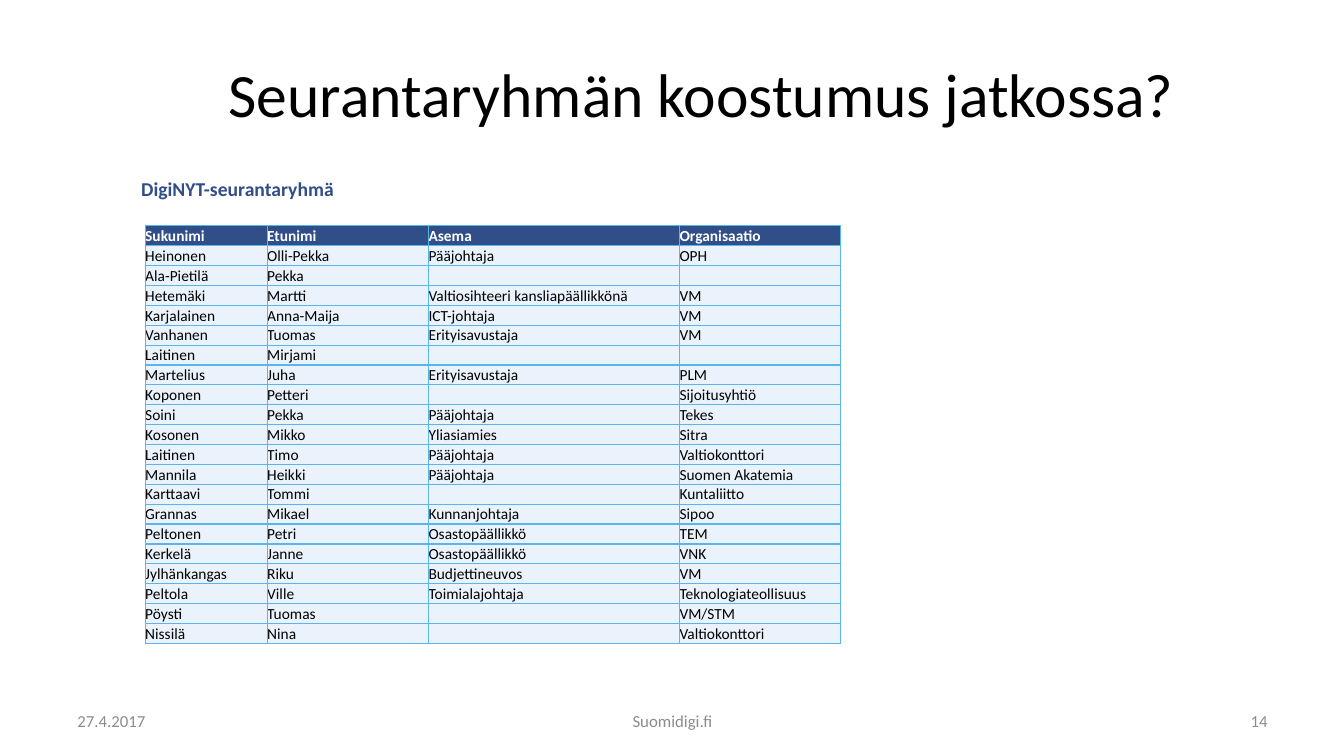
import lxml.etree
import pptx
import pptx.dml.color
import pptx.enum.text
import pptx.oxml.ns
import pptx.util

Inches = pptx.util.Inches
Pt = pptx.util.Pt
RGBColor = pptx.dml.color.RGBColor
ANCHOR = pptx.enum.text.MSO_ANCHOR
ALIGN = pptx.enum.text.PP_ALIGN
qn = pptx.oxml.ns.qn

BLACK = RGBColor(0x00, 0x00, 0x00)
WHITE = RGBColor(0xFF, 0xFF, 0xFF)
GREY = RGBColor(0x8C, 0x8C, 0x8C)
NAVY = RGBColor(0x30, 0x4E, 0x88)
PALE_BLUE = RGBColor(0xEA, 0xF3, 0xFB)
SKY_BLUE = RGBColor(0x5A, 0xB5, 0xEC)

TITLE_FONT = {"name": "Calibri", "size": Pt(44), "bold": False}
HEADING_FONT = {"name": "Calibri", "size": Pt(14), "bold": True}
FOOTER_FONT = {"name": "Calibri", "size": Pt(12), "bold": False}
HEADER_FONT = {"name": "Calibri", "size": Pt(11), "bold": True}
MEMBER_FONT = {"name": "Calibri", "size": Pt(11), "bold": False}

TITLE_FRAME = {"word_wrap": True, "vertical_anchor": ANCHOR.MIDDLE}
HEADING_FRAME = {
    "word_wrap": False,
    "margin_left": Inches(0.13),
    "margin_right": Inches(0.13),
    "margin_top": Inches(0.07),
    "margin_bottom": Inches(0.07),
}
CELL_FORMAT = {
    "vertical_anchor": ANCHOR.BOTTOM,
    "margin_left": 0,
    "margin_right": 0,
    "margin_top": 0,
    "margin_bottom": 0,
}

COLUMN_WIDTHS = (1.21, 1.6, 2.49, 1.6)
MEMBERS = (
    ("Sukunimi", "Etunimi", "Asema", "Organisaatio"),
    ("Heinonen", "Olli-Pekka", "Pääjohtaja", "OPH"),
    ("Ala-Pietilä", "Pekka", "", ""),
    ("Hetemäki", "Martti", "Valtiosihteeri kansliapäällikkönä", "VM"),
    ("Karjalainen", "Anna-Maija", "ICT-johtaja", "VM"),
    ("Vanhanen", "Tuomas", "Erityisavustaja", "VM"),
    ("Laitinen", "Mirjami", "", ""),
    ("Martelius", "Juha", "Erityisavustaja", "PLM"),
    ("Koponen", "Petteri", "", "Sijoitusyhtiö"),
    ("Soini", "Pekka", "Pääjohtaja", "Tekes"),
    ("Kosonen", "Mikko", "Yliasiamies", "Sitra"),
    ("Laitinen", "Timo", "Pääjohtaja", "Valtiokonttori"),
    ("Mannila", "Heikki", "Pääjohtaja", "Suomen Akatemia"),
    ("Karttaavi", "Tommi", "", "Kuntaliitto"),
    ("Grannas", "Mikael", "Kunnanjohtaja", "Sipoo"),
    ("Peltonen", "Petri", "Osastopäällikkö", "TEM"),
    ("Kerkelä", "Janne", "Osastopäällikkö", "VNK"),
    ("Jylhänkangas", "Riku", "Budjettineuvos", "VM"),
    ("Peltola", "Ville", "Toimialajohtaja", "Teknologiateollisuus"),
    ("Pöysti", "Tuomas", "", "VM/STM"),
    ("Nissilä", "Nina", "", "Valtiokonttori"),
)


def apply_format(target, values):
    for attribute, value in values.items():
        setattr(target, attribute, value)


def write_run(paragraph, text, font, color):
    run = paragraph.add_run()
    run.text = text
    apply_format(run.font, font)
    run.font.color.rgb = color


def add_label(slide, box, text, font, color, frame_format, align=ALIGN.LEFT):
    frame = slide.shapes.add_textbox(*map(Inches, box)).text_frame
    apply_format(frame, frame_format)
    paragraph = frame.paragraphs[0]
    paragraph.alignment = align
    write_run(paragraph, text, font, color)


def add_footer(slide, box):
    left, top, width, height = box
    side, middle = 3.11, 4.22
    parts = (
        ("27.4.2017", left, side, ALIGN.LEFT),
        ("Suomidigi.fi", left + (width - middle) / 2, middle, ALIGN.CENTER),
        ("14", left + width - side, side, ALIGN.RIGHT),
    )
    for text, part_left, part_width, align in parts:
        add_label(slide, (part_left, top, part_width, height),
                  text, FOOTER_FONT, GREY, TITLE_FRAME, align)


def add_borders(cell):
    properties = cell._tc.get_or_add_tcPr()
    for side in ("a:lnL", "a:lnR", "a:lnT", "a:lnB"):
        line = lxml.etree.SubElement(properties, qn(side), w=str(Pt(1)))
        fill = lxml.etree.SubElement(line, qn("a:solidFill"))
        lxml.etree.SubElement(fill, qn("a:srgbClr"), val=str(SKY_BLUE))


def fill_cell(cell, text, font, color, background):
    apply_format(cell, CELL_FORMAT)
    add_borders(cell)
    cell.fill.solid()
    cell.fill.fore_color.rgb = background
    paragraph = cell.text_frame.paragraphs[0]
    if text:
        write_run(paragraph, text, font, color)
    else:
        size = str(int(font["size"].pt * 100))
        lxml.etree.SubElement(paragraph._p, qn("a:endParaRPr"), sz=size)


def add_member_table(slide, box):
    table = slide.shapes.add_table(
        len(MEMBERS), len(COLUMN_WIDTHS), *map(Inches, box)).table
    table.horz_banding = False
    for column, width in zip(table.columns, COLUMN_WIDTHS):
        column.width = Inches(width)
    for index, member in enumerate(MEMBERS):
        table.rows[index].height = Inches(box[3] / len(MEMBERS))
        style = (MEMBER_FONT, BLACK, PALE_BLUE) if index else (HEADER_FONT, WHITE, NAVY)
        for cell, text in zip(table.rows[index].cells, member):
            fill_cell(cell, text, *style)


def main():
    presentation = pptx.Presentation()
    presentation.slide_width = Inches(13.33)
    presentation.slide_height = Inches(7.5)
    slide = presentation.slides.add_slide(presentation.slide_layouts[6])
    add_label(slide, (2.17, 0.3, 10.5, 1.25), "Seurantaryhmän koostumus jatkossa?",
              TITLE_FONT, BLACK, TITLE_FRAME)
    add_footer(slide, (0.67, 6.95, 12, 0.4))
    add_label(slide, (1.27, 1.69, 2.21, 0.37), "DigiNYT-seurantaryhmä",
              HEADING_FONT, NAVY, HEADING_FRAME)
    add_member_table(slide, (1.44, 2.24, sum(COLUMN_WIDTHS), 4.15))
    presentation.save("out.pptx")


if __name__ == "__main__":
    main()
